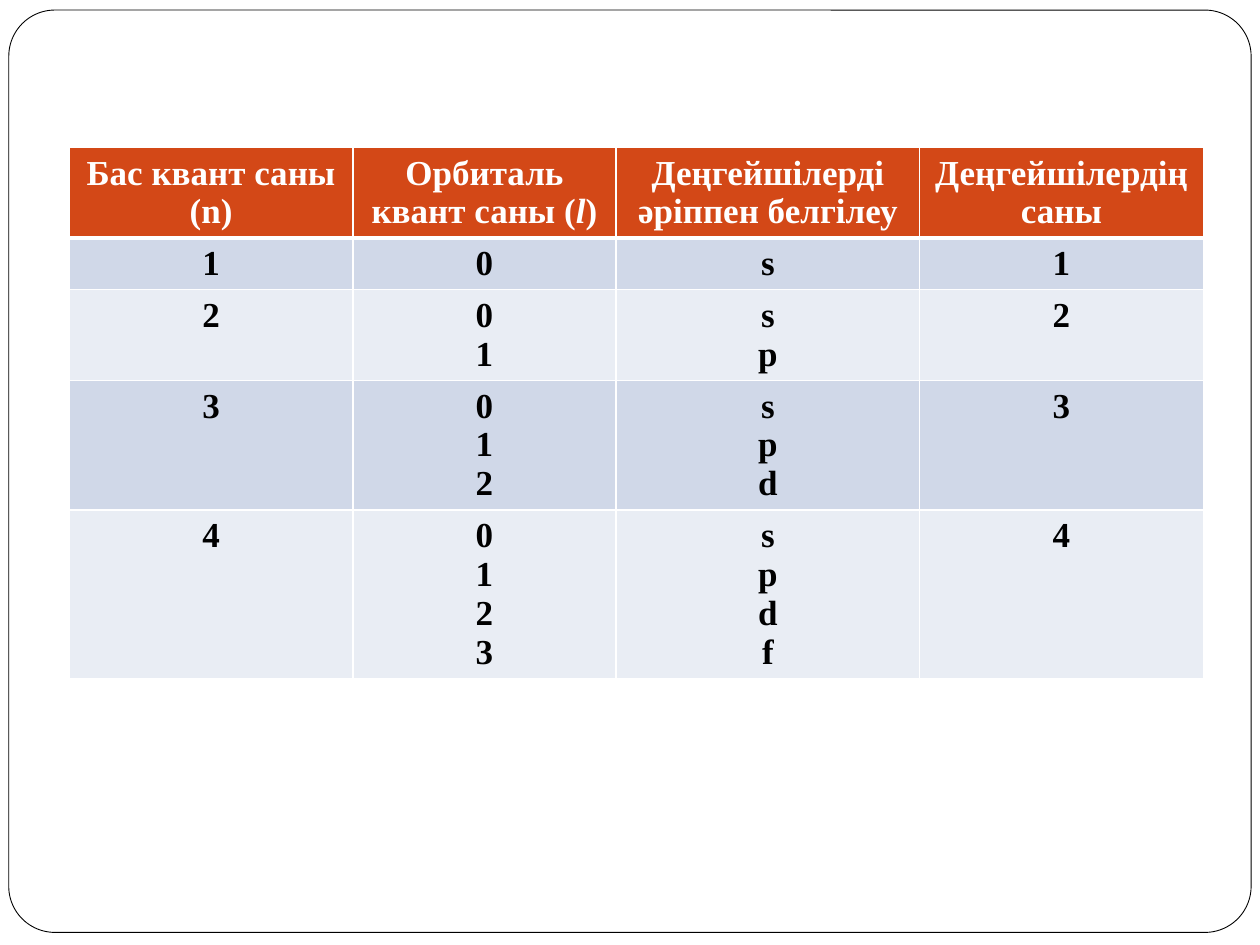
"""Build a slide with a table of quantum numbers and their sublevels."""
from lxml.etree import SubElement
from pptx import Presentation
from pptx.dml.color import RGBColor
from pptx.enum.shapes import MSO_SHAPE as Shape
from pptx.enum.text import PP_ALIGN as Align
from pptx.oxml.ns import qn
from pptx.util import Inches, Pt

COLORS = {
    "paper": "FFFFFF",
    "outline": "000000",
    "header": "D34817",
    "header_text": "FFFFFF",
    "odd_row": "D0D8E8",
    "even_row": "E9EDF4",
    "body_text": "000000",
    "grid": "FFFFFF",
}
FONT = "Times New Roman"
HEADERS = [
    [("Бас квант саны (n)", False)],
    [("Орбиталь квант саны (", False), ("l", True), (")", False)],
    [("Деңгейшілерді әріппен белгілеу", False)],
    [("Деңгейшілердің саны", False)],
]
SUBLEVELS = "spdf"
COLUMN_WIDTHS = [2.25, 2.09, 2.41, 2.25]
HEADER_LINES = 2
LINE_HEIGHT, CELL_PADDING = 0.31, 0.1


def color(name):
    return RGBColor.from_string(COLORS[name])


def add_frame(slide):
    frame = slide.shapes.add_shape(
        Shape.ROUNDED_RECTANGLE, Inches(0.07), Inches(0.08), Inches(9.86), Inches(7.32))
    frame.adjustments[0] = 0.05
    frame.shadow.inherit = False
    frame.fill.solid()
    frame.fill.fore_color.rgb = color("paper")
    frame.line.color.rgb = color("outline")
    frame.line.width = Pt(0.5)


def set_borders(cell, top, bottom):
    properties = cell._tc.get_or_add_tcPr()
    for side, width in (("L", 1), ("R", 1), ("T", top), ("B", bottom)):
        border = SubElement(properties, qn(f"a:ln{side}"), w=str(Pt(width)))
        fill = SubElement(border, qn("a:solidFill"))
        SubElement(fill, qn("a:srgbClr"), val=COLORS["grid"])


def style_cell(cell, fill, text_color, top=1, bottom=1):
    set_borders(cell, top, bottom)
    cell.fill.solid()
    cell.fill.fore_color.rgb = color(fill)
    for paragraph in cell.text_frame.paragraphs:
        paragraph.alignment = Align.CENTER
        for run in paragraph.runs:
            run.font.name = FONT
            run.font.size = Pt(20)
            run.font.bold = True
            run.font.color.rgb = color(text_color)


def add_quantum_table(slide):
    line_counts = [HEADER_LINES, *range(1, len(SUBLEVELS) + 1)]
    heights = [CELL_PADDING + LINE_HEIGHT * count for count in line_counts]
    table = slide.shapes.add_table(
        len(heights), len(HEADERS), Inches(0.55), Inches(1.17),
        Inches(sum(COLUMN_WIDTHS)), Inches(sum(heights))).table
    for column, width in zip(table.columns, COLUMN_WIDTHS):
        column.width = Inches(width)
    for row, height in zip(table.rows, heights):
        row.height = Inches(height)

    for column, pieces in enumerate(HEADERS):
        cell = table.cell(0, column)
        for text, italic in pieces:
            run = cell.text_frame.paragraphs[0].add_run()
            run.text = text
            run.font.italic = italic
        style_cell(cell, "header", "header_text", bottom=3)

    for n in range(1, len(SUBLEVELS) + 1):
        orbital_numbers = "\n".join(str(l) for l in range(n))
        letters = "\n".join(SUBLEVELS[:n])
        for column, text in enumerate([str(n), orbital_numbers, letters, str(n)]):
            cell = table.cell(n, column)
            cell.text_frame.text = text
            style_cell(cell, "odd_row" if n % 2 else "even_row", "body_text",
                       top=3 if n == 1 else 1)


def main():
    deck = Presentation()
    deck.slide_width, deck.slide_height = Inches(10), Inches(7.5)
    slide = deck.slides.add_slide(deck.slide_layouts[6])
    add_frame(slide)
    add_quantum_table(slide)
    deck.save("out.pptx")


if __name__ == "__main__":
    main()
